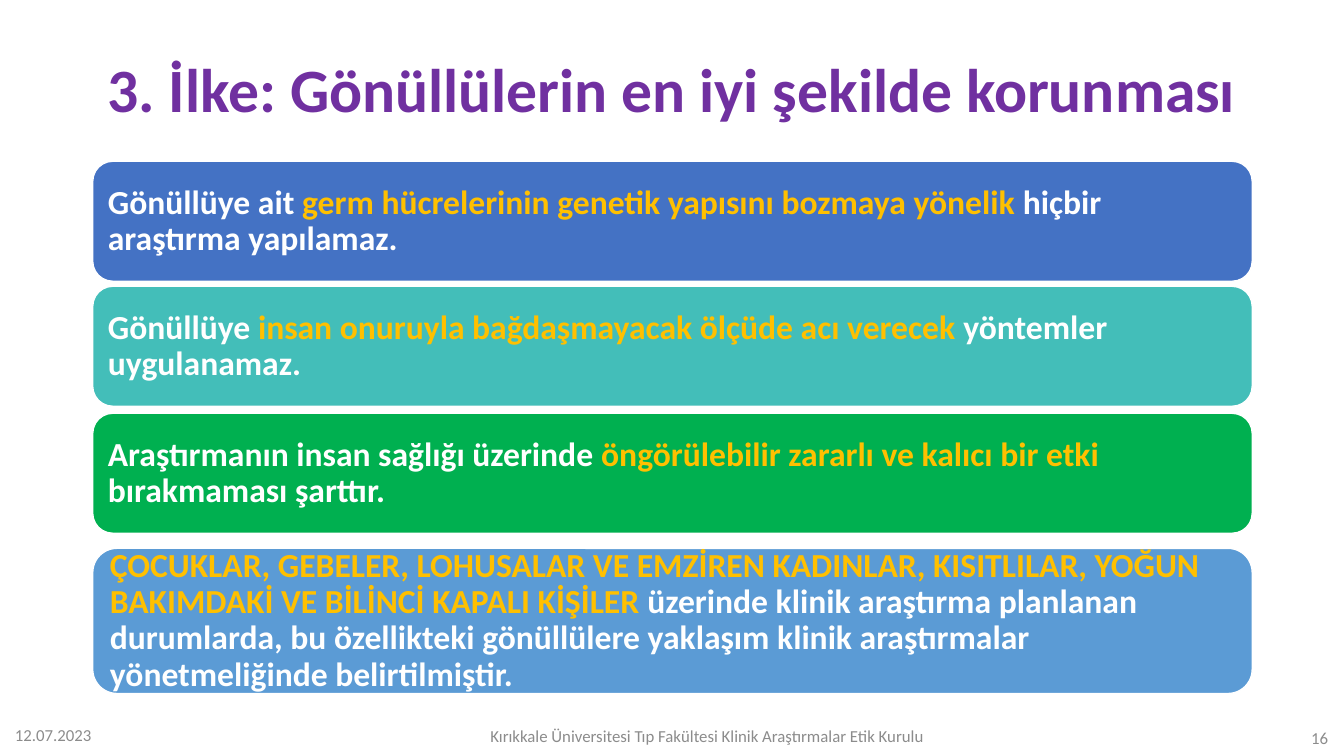
"""Build the slide on the third principle: protecting volunteers."""
from pptx import Presentation
from pptx.dml.color import RGBColor
from pptx.enum.shapes import MSO_SHAPE
from pptx.enum.text import MSO_ANCHOR, PP_ALIGN
from pptx.util import Inches, Pt

ROUNDED = MSO_SHAPE.ROUNDED_RECTANGLE
MIDDLE = MSO_ANCHOR.MIDDLE
LEFT, CENTER, RIGHT = PP_ALIGN.LEFT, PP_ALIGN.CENTER, PP_ALIGN.RIGHT

FONT = "Calibri"
COLORS = {
    "title": "7030A0", "text": "FFFFFF", "accent": "FFC000", "footer": "8C8C8C",
    "blue": "4472C4", "teal": "43BEB9", "green": "00B050", "sky": "5B9BD5",
}
SLIDE_W, SLIDE_H = 13.33, 7.5
BAR_LEFT, BAR_W = 0.92, 11.5

TITLE = "3. İlke: Gönüllülerin en iyi şekilde korunması"
BARS = [
    ("blue", 1.6, 1.19, 0.15, [
        ("Gönüllüye ait ", "text"),
        ("germ hücrelerinin genetik yapısını bozmaya yönelik ", "accent"),
        ("hiçbir araştırma yapılamaz.", "text")]),
    ("teal", 2.84, 1.19, 0.15, [
        ("Gönüllüye ", "text"),
        ("insan onuruyla bağdaşmayacak ölçüde acı verecek ", "accent"),
        ("yöntemler uygulanamaz.", "text")]),
    ("green", 4.1, 1.19, 0.15, [
        ("Araştırmanın insan sağlığı üzerinde ", "text"),
        ("öngörülebilir zararlı ve kalıcı bir etki ", "accent"),
        ("bırakmaması şarttır.", "text")]),
    ("sky", 5.44, 1.44, 0.17, [
        ("ÇOCUKLAR, GEBELER, LOHUSALAR VE EMZİREN KADINLAR, KISITLILAR, "
         "YOĞUN BAKIMDAKİ VE BİLİNCİ KAPALI KİŞİLER ", "accent"),
        ("üzerinde klinik araştırma planlanan durumlarda, bu özellikteki "
         "gönüllülere yaklaşım klinik araştırmalar yönetmeliğinde "
         "belirtilmiştir.", "text")]),
]
FOOTERS = [
    ("12.07.2023", (0.05, 7.11, 3, 0.36), LEFT),
    ("16", (10.27, 7.17, 3, 0.3), RIGHT),
    ("Kırıkkale Üniversitesi Tıp Fakültesi Klinik Araştırmalar Etik Kurulu",
     (4.42, 7.1, 5.19, 0.4), CENTER),
]


def rgb(name):
    return RGBColor.from_string(COLORS[name])


def write(sp, parts, size, align, bold=False, spacing=1.0, inset=0.1):
    tf = sp.text_frame
    tf.word_wrap = True
    tf.vertical_anchor = MIDDLE
    tf.margin_left = tf.margin_right = Inches(inset)
    tf.margin_top = tf.margin_bottom = Inches(0.05)
    p = tf.paragraphs[0]
    p.alignment = align
    p.line_spacing = spacing
    for text, color in parts:
        r = p.add_run()
        r.text = text
        r.font.name = FONT
        r.font.size = Pt(size)
        r.font.bold = bold
        r.font.color.rgb = rgb(color)


def add_text(s, box, *args, **kwargs):
    write(s.shapes.add_textbox(*map(Inches, box)), *args, **kwargs)


def add_bar(s, fill, top, height, inset, parts):
    box = (BAR_LEFT, top, BAR_W, height)
    sp = s.shapes.add_shape(ROUNDED, *map(Inches, box))
    sp.shadow.inherit = False
    sp.fill.solid()
    sp.fill.fore_color.rgb = rgb(fill)
    sp.line.color.rgb = rgb("text")
    sp.line.width = Pt(1)
    write(sp, parts, 24, LEFT, bold=True, spacing=0.9,
          inset=inset - rounding_inset(sp, height))


def rounding_inset(sp, height):
    return sp.adjustments[0] * height * 0.29


def main():
    prs = Presentation()
    prs.slide_width, prs.slide_height = Inches(SLIDE_W), Inches(SLIDE_H)
    s = prs.slides.add_slide(prs.slide_layouts[6])
    add_text(s, (BAR_LEFT, 0.26, BAR_W, 1.32), [(TITLE, "title")], 44, CENTER,
             bold=True, spacing=0.9)
    for bar in BARS:
        add_bar(s, *bar)
    for text, box, align in FOOTERS:
        add_text(s, box, [(text, "footer")], 12, align)
    prs.save("out.pptx")


if __name__ == "__main__":
    main()
